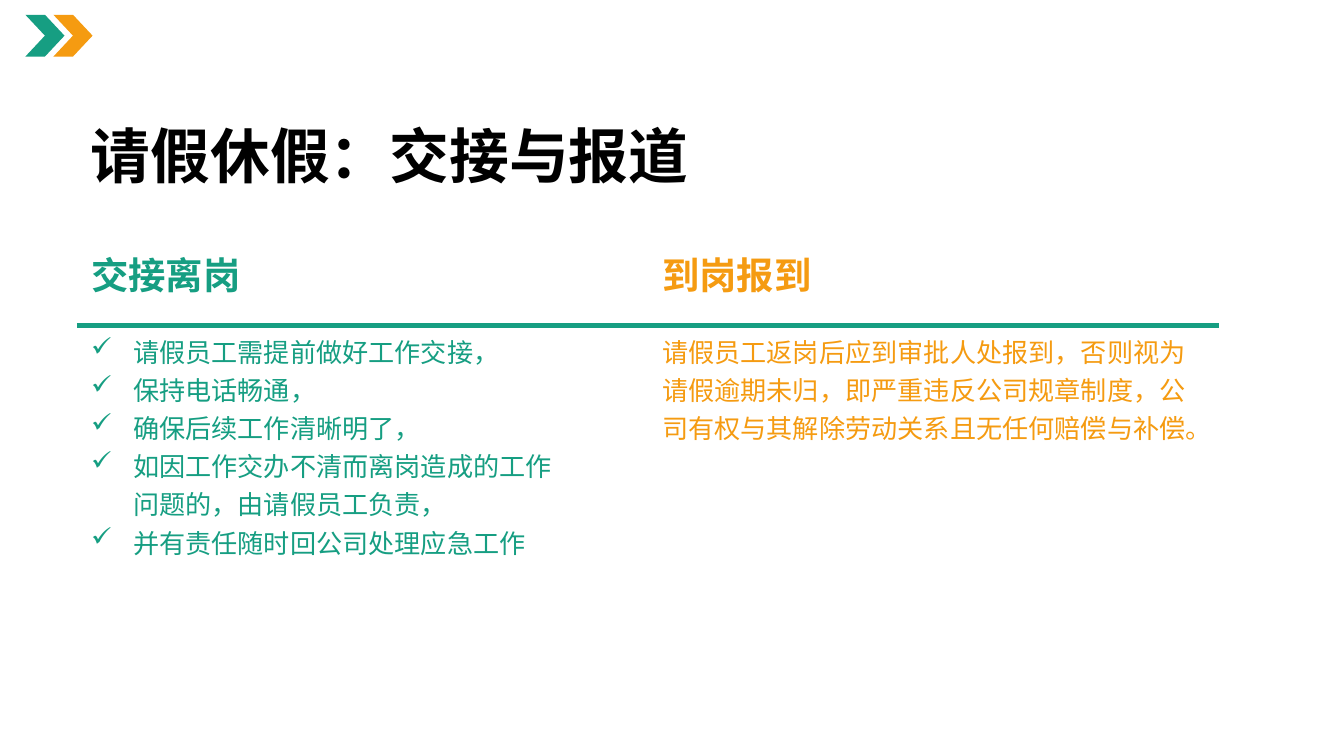
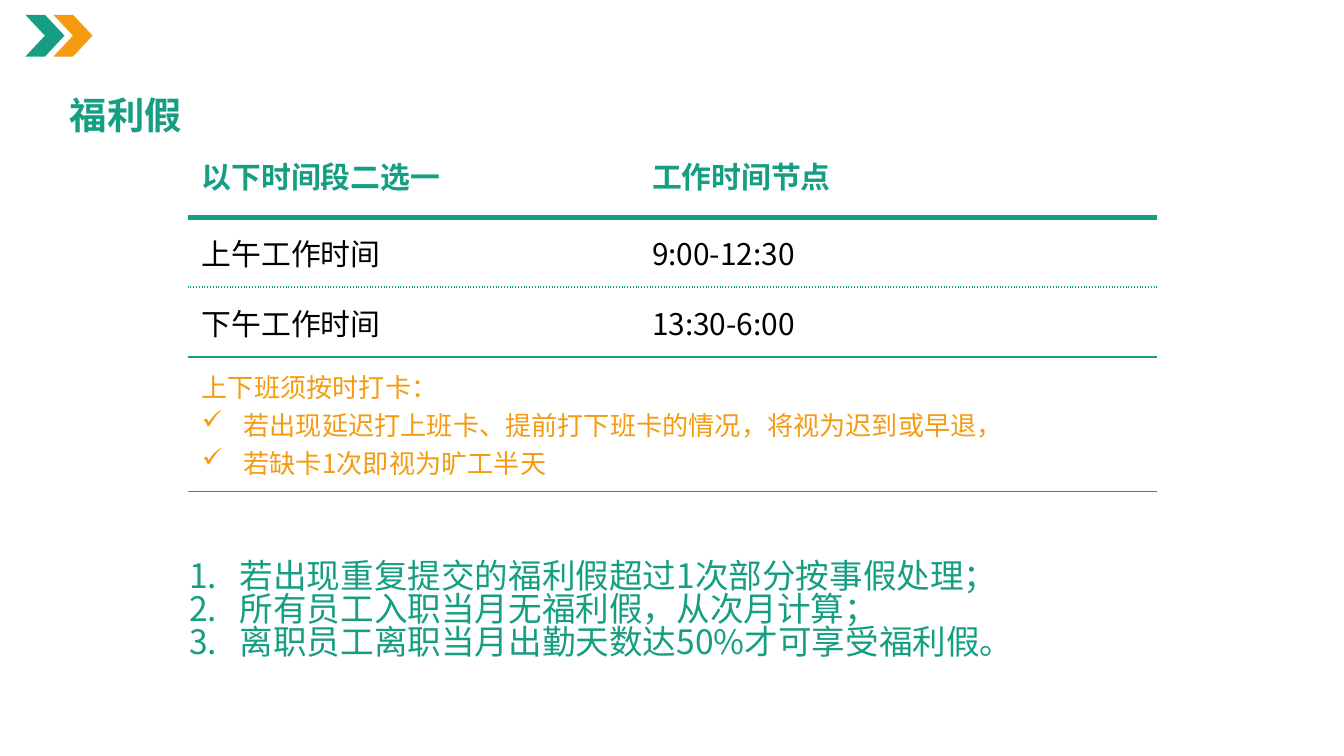
import lxml.etree
import pptx
import pptx.dml.color
import pptx.enum.shapes
import pptx.enum.text
import pptx.oxml.ns
import pptx.util

Cm = pptx.util.Cm
Pt = pptx.util.Pt
GREEN, ORANGE, BLACK, WHITE = "169E82", "F59B11", "000000", "FFFFFF"
FONT = "Noto Sans CJK SC"
TOP, MIDDLE = pptx.enum.text.MSO_ANCHOR.TOP, pptx.enum.text.MSO_ANCHOR.MIDDLE
JUSTIFY = pptx.enum.text.PP_ALIGN.JUSTIFY
CHECK, NUMBER = ("buChar", "char", "✓", 0.79), ("buAutoNum", "type", "arabicPeriod", 0.95)
NO_EDGE, THICK, THIN, DOTTED = (WHITE, 1, "solid"), (GREEN, 3, "solid"), (GREEN, 1, "solid"), (GREEN, 1, "sysDot")


def rgb(color):
    """Turn a hex string into a colour."""
    return pptx.dml.color.RGBColor.from_string(color)


def apply(target, values):
    """Set each attribute named in a dict of format values."""
    for name, value in values.items():
        setattr(target, name, value)


def add_element(parent, tag, **attributes):
    """Append a DrawingML element and return it."""
    return lxml.etree.SubElement(parent, pptx.oxml.ns.qn("a:" + tag), attributes)


def add_bullet(paragraph, bullet):
    """Give a paragraph a hanging check mark or number."""
    tag, attribute, value, indent = bullet
    properties = paragraph._p.get_or_add_pPr()
    properties.set("marL", str(Cm(indent)))
    properties.set("indent", str(-Cm(indent)))
    add_element(properties, tag, **{attribute: value})


def write(frame, lines, size, color, bold=False, font=FONT, paragraph_format=None):
    """Fill a text frame with (text, bullet) lines."""
    for index, (text, bullet) in enumerate(lines):
        paragraph = frame.add_paragraph() if index else frame.paragraphs[0]
        apply(paragraph, paragraph_format or {})
        if bullet:
            add_bullet(paragraph, bullet)
        run = paragraph.add_run()
        run.text = text
        apply(run.font, {"size": Pt(size), "bold": bold, "name": font})
        run.font.color.rgb = rgb(color)
        add_element(run._r.get_or_add_rPr(), "ea", typeface=FONT)


def add_text(slide, box, lines, size, color, bold=False, wrap=True, alignment=None):
    """Place a text box with tight line spacing in a box."""
    frame = slide.shapes.add_textbox(*map(Cm, box)).text_frame
    shift = 0.09 * size
    apply(frame, {
        "word_wrap": wrap,
        "auto_size": pptx.enum.text.MSO_AUTO_SIZE.SHAPE_TO_FIT_TEXT,
        "margin_top": Pt(3.6 + shift),
        "margin_bottom": Pt(3.6 - shift),
    })
    write(frame, lines, size, color, bold,
          paragraph_format={"line_spacing": 0.82, "alignment": alignment})


def add_edges(cell, top, bottom):
    """Draw the four borders of a table cell."""
    properties = cell._tc.get_or_add_tcPr()
    edges = {"lnL": NO_EDGE, "lnR": NO_EDGE, "lnT": top, "lnB": bottom}
    for index, (tag, (color, width, dash)) in enumerate(edges.items()):
        line = add_element(properties, tag, w=str(Pt(width)))
        add_element(add_element(line, "solidFill"), "srgbClr", val=color)
        add_element(line, "prstDash", val=dash)
        properties.insert(index, line)


def add_table(slide, left, top, columns, rows, rules):
    """Place an unfilled table whose rows are divided by the given rules."""
    table = slide.shapes.add_table(len(rows), len(columns), Cm(left), Cm(top),
                                   Cm(sum(columns)), Cm(sum(rows))).table
    apply(table, {"first_row": False, "horz_banding": False})
    for column, width in zip(table.columns, columns):
        column.width = Cm(width)
    for index, height in enumerate(rows):
        table.rows[index].height = Cm(height)
        for cell in table.rows[index].cells:
            add_edges(cell, rules[index], rules[index + 1])
            cell.fill.background()
    return table


def fill_cell(cell, lines, size, color, bold=False, font=FONT, anchor=MIDDLE):
    """Write lines into a table cell."""
    cell.vertical_anchor = anchor
    write(cell.text_frame, lines, size, color, bold, font)


def add_chevrons(slide, left, top):
    """Draw the pair of chevrons in the slide corner."""
    for index, color in enumerate((GREEN, ORANGE)):
        chevron = slide.shapes.add_shape(pptx.enum.shapes.MSO_SHAPE.CHEVRON,
                                         Cm(left + index * 0.53), Cm(top), Cm(0.74), Cm(0.79))
        chevron.shadow.inherit = False
        chevron.fill.solid()
        chevron.fill.fore_color.rgb = rgb(color)
        chevron.line.fill.background()


def add_slide(presentation):
    """Add a blank slide with the corner chevrons."""
    slide = presentation.slides.add_slide(presentation.slide_layouts[6])
    add_chevrons(slide, 0.48, 0.28)
    return slide


def add_handover_table(slide, left, top):
    """Compare handing over with reporting back."""
    table = add_table(slide, left, top, (9.37, 1.42, 10.77), (1.96, 5.88), (NO_EDGE, THICK, NO_EDGE))
    duties = ("请假员工需提前做好工作交接，", "保持电话畅通，", "确保后续工作清晰明了，",
              "如因工作交办不清而离岗造成的工作问题的，由请假员工负责，", "并有责任随时回公司处理应急工作")
    report = "请假员工返岗后应到审批人处报到，否则视为请假逾期未归，即严重违反公司规章制度，公司有权与其解除劳动关系且无任何赔偿与补偿。"
    topics = ((0, "交接离岗", GREEN, [(duty, CHECK) for duty in duties]),
              (2, "到岗报到", ORANGE, [(report, None)]))
    for column, heading, color, lines in topics:
        fill_cell(table.cell(0, column), [(heading, None)], 20, color, True, "Calibri")
        fill_cell(table.cell(1, column), lines, 14, color, anchor=TOP)


def add_hours_table(slide, left, top):
    """List the working hours and the clock-in rules."""
    table = add_table(slide, left, top, (8.51, 9.78), (1.32, 1.32, 1.32, 2.54),
                      (NO_EDGE, THICK, DOTTED, THIN, THIN))
    hours = (("以下时间段二选一", "工作时间节点"),
             ("上午工作时间", "9:00-12:30"),
             ("下午工作时间", "13:30-6:00"))
    for row, texts in enumerate(hours):
        style = (BLACK, False, FONT, MIDDLE) if row else (GREEN, True, FONT, TOP)
        for column, text in enumerate(texts):
            fill_cell(table.cell(row, column), [(text, None)], 16, *style)
    rules_cell = table.cell(3, 0)
    rules_cell.merge(table.cell(3, 1))
    fill_cell(rules_cell, [("上下班须按时打卡：", None),
                           ("若出现延迟打上班卡、提前打下班卡的情况，将视为迟到或早退，", CHECK),
                           ("若缺卡1次即视为旷工半天", CHECK)], 14, ORANGE)


def build_handover_slide(presentation):
    """Build the slide on handover and reporting back."""
    slide = add_slide(presentation)
    add_text(slide, (1.47, 2.26, 21.56, 1.63), [("请假休假：交接与报道", None)], 32, BLACK, True)
    add_handover_table(slide, 1.47, 4.19)


def build_benefit_slide(presentation):
    """Build the slide on benefit leave."""
    slide = add_slide(presentation)
    notes = ("若出现重复提交的福利假超过1次部分按事假处理；", "所有员工入职当月无福利假，从次月计算；",
             "离职员工离职当月出勤天数达50%才可享受福利假。")
    add_text(slide, (3.33, 10.44, 21.44, 2.57), [(note, NUMBER) for note in notes],
             18, GREEN, alignment=JUSTIFY)
    add_text(slide, (1.07, 1.7, 2.64, 1.12), [("福利假", None)], 20, GREEN, True, wrap=False)
    add_hours_table(slide, 3.56, 2.79)


def main():
    """Build and save the presentation."""
    presentation = pptx.Presentation()
    apply(presentation, {"slide_width": Cm(25.4), "slide_height": Cm(14.29)})
    build_handover_slide(presentation)
    build_benefit_slide(presentation)
    presentation.save("out.pptx")


if __name__ == "__main__":
    main()
